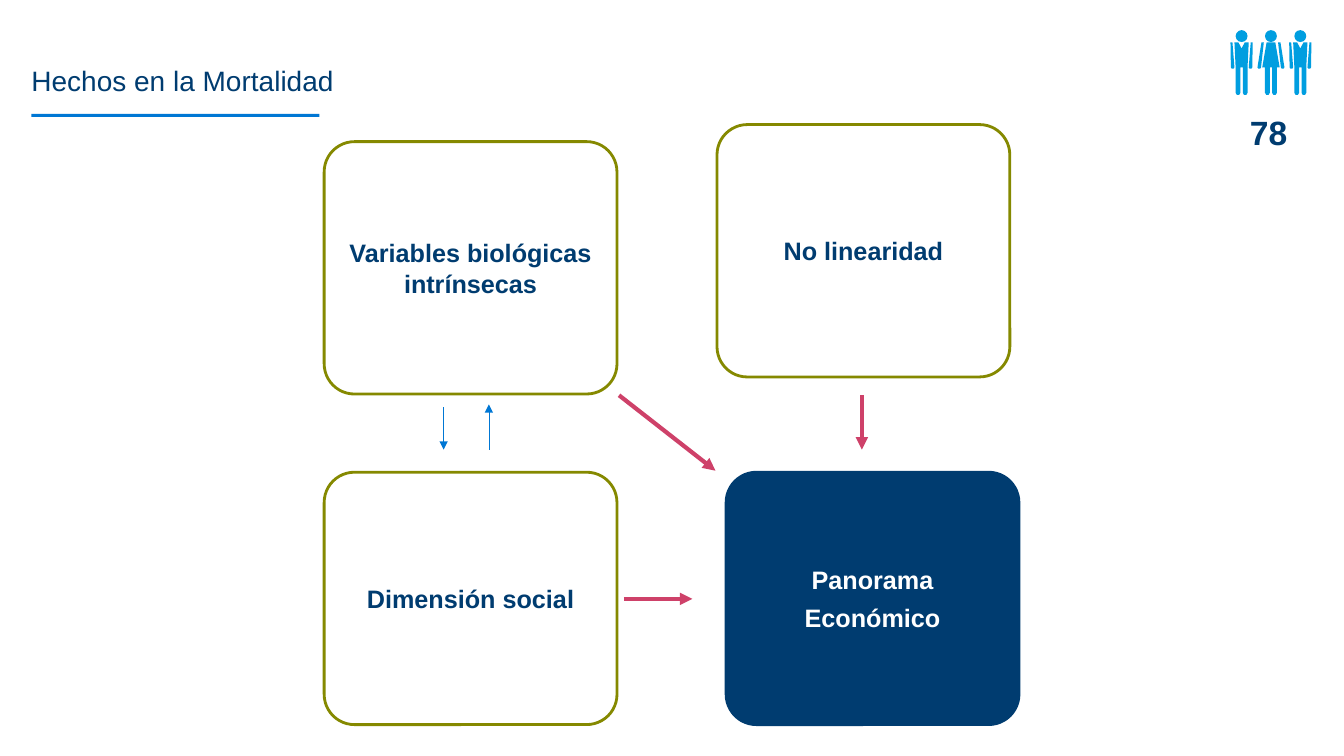
"""Build the slide on mortality facts and the economic outlook."""
from lxml import etree
from pptx import Presentation
from pptx.dml.color import RGBColor
from pptx.enum.shapes import MSO_CONNECTOR, MSO_SHAPE
from pptx.enum.text import MSO_ANCHOR, PP_ALIGN
from pptx.oxml.ns import qn
from pptx.util import Cm, Pt

NAVY = RGBColor(0x00, 0x3C, 0x70)
BLUE = RGBColor(0x00, 0x77, 0xD4)
SKY = RGBColor(0x00, 0x9E, 0xE0)
OLIVE = RGBColor(0x85, 0x89, 0x00)
ROSE = RGBColor(0xCE, 0x41, 0x69)
WHITE = RGBColor(0xFF, 0xFF, 0xFF)

LEFT_COLUMN, BOTTOM_ROW = 8.17, 11.9
CARD_WIDTH, CARD_HEIGHT = 7.38, 6.36
FIRST_PERSON, PERSON_STEP = 31.29, 0.74
LEG = [(15, 170), (15, 234), (12, 239), (6, 239), (3, 234), (3, 170)]
MAN_BODY = [(0, 122), (8, 107), (18, 107)] + LEG
MAN_ARM = [(23, 107), (28, 107), (27, 170), (25, 173), (20, 173), (18, 170)]
WOMAN_BODY = [(11, 107), (22, 170)] + LEG
WOMAN_ARM = [(18, 107), (24, 107), (34, 170), (32, 173), (27, 173), (25, 170)]


def write(frame, lines, size, color, bold=False, align=PP_ALIGN.CENTER, after=6):
    """Write each line as a paragraph holding one formatted run."""
    frame.word_wrap = True
    for index, line in enumerate(lines):
        paragraph = frame.add_paragraph() if index else frame.paragraphs[0]
        paragraph.alignment = align
        paragraph.space_after = Pt(after)
        run = paragraph.add_run()
        run.text = line
        run.font.name = "Arial"
        run.font.size = Pt(size)
        run.font.bold = bold
        run.font.color.rgb = color


def set_margins(frame, margin):
    """Give a text frame the same margin on all sides."""
    frame.margin_left = frame.margin_right = margin
    frame.margin_top = frame.margin_bottom = margin


def paint(shape, color):
    """Fill a shape with one flat colour."""
    shape.shadow.inherit = False
    shape.fill.solid()
    shape.fill.fore_color.rgb = color
    shape.line.fill.background()


def add_title(slide, text):
    """Place the title and the rule beneath it."""
    title = slide.shapes.title
    title.left, title.top = Cm(0.79), Cm(0.76)
    title.width, title.height = Cm(32.26), Cm(1.7)
    set_margins(title.text_frame, 0)
    title.text_frame.vertical_anchor = MSO_ANCHOR.BOTTOM
    write(title.text_frame, [text], 20, NAVY, align=PP_ALIGN.LEFT, after=0)
    rule = slide.shapes.add_shape(
        MSO_SHAPE.RECTANGLE, Cm(0.79), Cm(2.87), Cm(7.26), Cm(0.08))
    paint(rule, BLUE)


def add_card(slide, left, top, lines, border=OLIVE, fill=None, ink=NAVY):
    """Add a rounded card with centred bold text."""
    card = slide.shapes.add_shape(
        MSO_SHAPE.ROUNDED_RECTANGLE, Cm(left), Cm(top), Cm(CARD_WIDTH), Cm(CARD_HEIGHT))
    card.adjustments[0] = 0.12
    card.shadow.inherit = False
    if fill is None:
        card.fill.background()
    else:
        card.fill.solid()
        card.fill.fore_color.rgb = fill
    card.line.color.rgb = border
    card.line.width = Pt(2)
    card.text_frame.vertical_anchor = MSO_ANCHOR.MIDDLE
    set_margins(card.text_frame, Cm(0.2))
    write(card.text_frame, lines, 18, ink, bold=True)


def add_arrow(shapes, start, end, color, width):
    """Draw an arrow between two points given in centimetres."""
    arrow = shapes.add_connector(
        MSO_CONNECTOR.STRAIGHT, *(Cm(value) for value in start + end))
    arrow.line.color.rgb = color
    arrow.line.width = Pt(width)
    etree.SubElement(arrow.line._get_or_add_ln(), qn("a:tailEnd"), type="triangle")
    etree.SubElement(arrow._element.spPr, qn("a:effectLst"))


def add_outline(shapes, points, center):
    """Fill a polygon whose points are hundredths of a centimetre."""
    outline = [(x + round(center * 100), y) for x, y in points]
    builder = shapes.build_freeform(*outline[0], scale=Cm(0.01))
    builder.add_line_segments(outline[1:])
    paint(builder.convert_to_shape(), SKY)


def mirror(points):
    """Reflect points across the body axis."""
    return [(-x, y) for x, y in reversed(points)]


def add_person(shapes, center, body, arm):
    """Draw a standing figure from head, body and two arms."""
    head = shapes.add_shape(
        MSO_SHAPE.OVAL, Cm(center - 0.15), Cm(0.76), Cm(0.3), Cm(0.3))
    paint(head, SKY)
    for points in (body + mirror(body), arm, mirror(arm)):
        add_outline(shapes, points, center)


def add_page_badge(slide, number):
    """Group the three figures with the page number below them."""
    badge = slide.shapes.add_group_shape().shapes
    figures = [(MAN_BODY, MAN_ARM), (WOMAN_BODY, WOMAN_ARM), (MAN_BODY, MAN_ARM)]
    for index, (body, arm) in enumerate(figures):
        add_person(badge, FIRST_PERSON + index * PERSON_STEP, body, arm)
    page = badge.add_textbox(Cm(30.94), Cm(2.74), Cm(2.06), Cm(1.17)).text_frame
    set_margins(page, 0)
    page.vertical_anchor = MSO_ANCHOR.MIDDLE
    write(page, [number], 24, NAVY, bold=True)


def main():
    """Assemble and save the slide."""
    deck = Presentation()
    deck.slide_width, deck.slide_height = Cm(33.87), Cm(19.05)
    slide = deck.slides.add_slide(deck.slide_layouts[5])
    add_title(slide, "Hechos en la Mortalidad")

    add_card(slide, LEFT_COLUMN, 3.57, ["Variables biológicas intrínsecas"])
    add_card(slide, 18.3, BOTTOM_ROW, ["Panorama", "Económico"], NAVY, NAVY, WHITE)
    add_card(slide, 18.07, 3.14, ["No linearidad"])
    add_card(slide, LEFT_COLUMN, BOTTOM_ROW, ["Dimensión social"])

    for start, end in [((21.72, 9.96), (21.72, 11.33)),
                       ((15.6, 9.96), (18.03, 11.86)),
                       ((15.72, 15.09), (17.45, 15.09))]:
        add_arrow(slide.shapes, start, end, ROSE, 3)
    add_page_badge(slide, "78")
    exchange = slide.shapes.add_group_shape().shapes
    add_arrow(exchange, (11.18, 10.26), (11.18, 11.33), BLUE, 0.5)
    add_arrow(exchange, (12.32, 11.33), (12.32, 10.19), BLUE, 0.5)
    deck.save("out.pptx")


if __name__ == "__main__":
    main()
